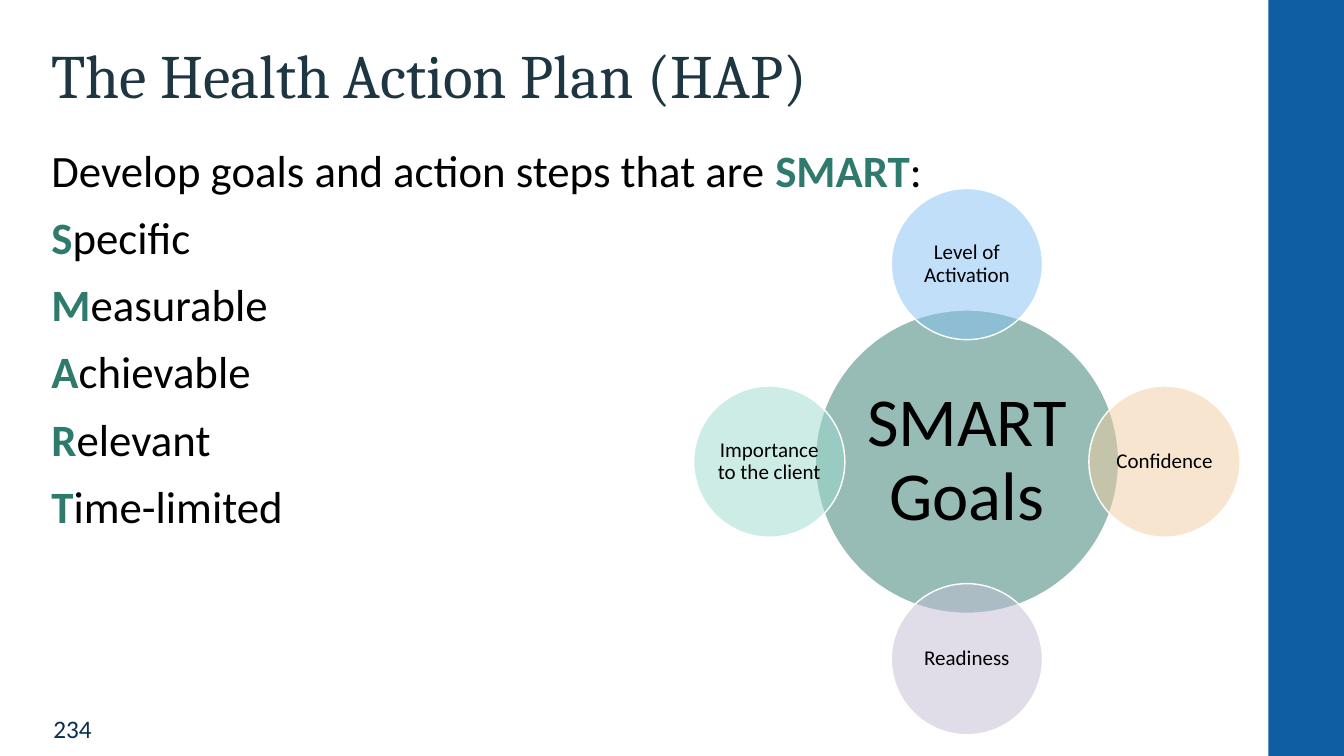
from dataclasses import dataclass
from math import cos, pi, sin

from lxml.etree import SubElement
from pptx import Presentation
from pptx.dml.color import RGBColor
from pptx.enum.shapes import MSO_SHAPE
from pptx.enum.text import MSO_ANCHOR, MSO_AUTO_SIZE, PP_ALIGN
from pptx.oxml.ns import qn
from pptx.util import Inches, Pt


@dataclass(frozen=True)
class Theme:
    heading_font: str = "Cambria"
    body_font: str = "Calibri"
    heading: str = "1D3641"
    text: str = "000000"
    accent: str = "2E7A6D"
    sidebar: str = "0F5DA3"
    page_number: str = "082E52"
    outline: str = "FFFFFF"
    title_size: float = 44
    body_size: float = 32
    hub_size: float = 49
    circle_size: float = 15
    number_size: float = 18


@dataclass(frozen=True)
class Circle:
    text: str
    color: str
    x: float
    y: float
    diameter: float
    size: float
    inset: float


THEME = Theme()
LINE_SPACING = 0.9
LEFT, TEXT_WIDTH = 0.51, 11.5

# Circle layout: a hub with satellites a quarter turn apart, clockwise from the top
HUB_X, HUB_Y, ORBIT = 9.59, 4.58, 1.96
HUB_DIAMETER, SATELLITE_DIAMETER = 3.01, 1.5
SATELLITES = [
    ("Level of Activation", "85C0F4"),
    ("Confidence", "F2CDA3"),
    ("Readiness", "C2BDD3"),
    ("Importance to the client", "9CDACF"),
]

# Each line is a list of (text, is highlighted) runs
GOALS = ["Specific", "Measurable", "Achievable", "Relevant", "Time-limited"]
BODY_LINES = [
    [("Develop goals and action steps that are ", False), ("SMART", True), (":", False)],
    *[[(goal[0], True), (goal[1:], False)] for goal in GOALS],
]


def set_values(target, values: dict) -> None:
    for name, value in values.items():
        setattr(target, name, value)


def place(shape, left: float, top: float, width: float, height: float) -> None:
    box = {"left": left, "top": top, "width": width, "height": height}
    set_values(shape, {name: Inches(value) for name, value in box.items()})


def format_frame(frame, anchor=MSO_ANCHOR.TOP, inset: float = 0) -> None:
    sides = ("margin_left", "margin_top", "margin_right", "margin_bottom")
    set_values(frame, {"word_wrap": True, "auto_size": MSO_AUTO_SIZE.NONE,
                       "vertical_anchor": anchor,
                       **{side: Inches(inset) for side in sides}})


def add_run(paragraph, text: str, size: float, color: str,
            font: str = THEME.body_font, bold: bool = False) -> None:
    run = paragraph.add_run()
    run.text = text
    set_values(run.font, {"name": font, "size": Pt(size), "bold": bold})
    run.font.color.rgb = RGBColor.from_string(color)


def add_filled_shape(slide, kind, color: str, left: float, top: float,
                     width: float, height: float):
    shape = slide.shapes.add_shape(kind, Inches(left), Inches(top),
                                   Inches(width), Inches(height))
    shape.shadow.inherit = False
    shape.fill.solid()
    shape.fill.fore_color.rgb = RGBColor.from_string(color)
    shape.line.fill.background()
    return shape


def add_circle(slide, circle: Circle) -> None:
    radius = circle.diameter / 2
    shape = add_filled_shape(slide, MSO_SHAPE.OVAL, circle.color, circle.x - radius,
                             circle.y - radius, circle.diameter, circle.diameter)
    # Half-transparent fill with a thin outline
    color = shape.fill._xPr.find(qn("a:solidFill")).find(qn("a:srgbClr"))
    SubElement(color, qn("a:alpha"), val="50000")
    shape.line.color.rgb = RGBColor.from_string(THEME.outline)
    shape.line.width = Pt(1)
    format_frame(shape.text_frame, MSO_ANCHOR.MIDDLE, circle.inset)
    paragraph = shape.text_frame.paragraphs[0]
    set_values(paragraph, {"alignment": PP_ALIGN.CENTER, "line_spacing": LINE_SPACING})
    add_run(paragraph, circle.text, circle.size, THEME.text)


def add_title(slide) -> None:
    title = slide.shapes.title
    place(title, LEFT, 0.45, TEXT_WIDTH, 0.91)
    format_frame(title.text_frame)
    paragraph = title.text_frame.paragraphs[0]
    set_values(paragraph, {"alignment": PP_ALIGN.LEFT, "line_spacing": LINE_SPACING})
    add_run(paragraph, "The Health Action Plan (HAP)", THEME.title_size,
            THEME.heading, THEME.heading_font)


def add_body(slide) -> None:
    body = slide.placeholders[1]
    place(body, LEFT, 1.48, TEXT_WIDTH, 4.76)
    frame = body.text_frame
    format_frame(frame)
    for index, line in enumerate(BODY_LINES):
        paragraph = frame.add_paragraph() if index else frame.paragraphs[0]
        properties = paragraph._p.get_or_add_pPr()
        properties.set("marL", "0")
        properties.set("indent", "0")
        SubElement(properties, qn("a:buNone"))
        set_values(paragraph, {"alignment": PP_ALIGN.LEFT, "line_spacing": LINE_SPACING,
                               "space_before": Pt(13.3 if index else 0)})
        for text, highlighted in line:
            add_run(paragraph, text, THEME.body_size,
                    THEME.accent if highlighted else THEME.text, bold=highlighted)


def add_page_number(slide) -> None:
    number = slide.shapes.add_textbox(Inches(0.53), Inches(7.01), Inches(0.73), Inches(0.43))
    format_frame(number.text_frame, MSO_ANCHOR.MIDDLE)
    add_run(number.text_frame.paragraphs[0], "234", THEME.number_size, THEME.page_number)


def add_goal_circles(slide) -> None:
    add_circle(slide, Circle("SMART Goals", THEME.accent, HUB_X, HUB_Y,
                             HUB_DIAMETER, THEME.hub_size, 0.07))
    for index, (text, color) in enumerate(SATELLITES):
        angle = 2 * pi * index / len(SATELLITES) - pi / 2
        add_circle(slide, Circle(text, color, HUB_X + ORBIT * cos(angle),
                                 HUB_Y + ORBIT * sin(angle),
                                 SATELLITE_DIAMETER, THEME.circle_size, 0.02))


def main() -> None:
    presentation = Presentation()
    presentation.slide_width = Inches(13.33)
    presentation.slide_height = Inches(7.5)
    slide = presentation.slides.add_slide(presentation.slide_layouts[1])
    # Sidebar and page number
    add_filled_shape(slide, MSO_SHAPE.RECTANGLE, THEME.sidebar, 12.58, 0, 0.75, 7.5)
    add_page_number(slide)
    # Text and diagram
    add_title(slide)
    add_body(slide)
    add_goal_circles(slide)
    presentation.save("out.pptx")


if __name__ == "__main__":
    main()
